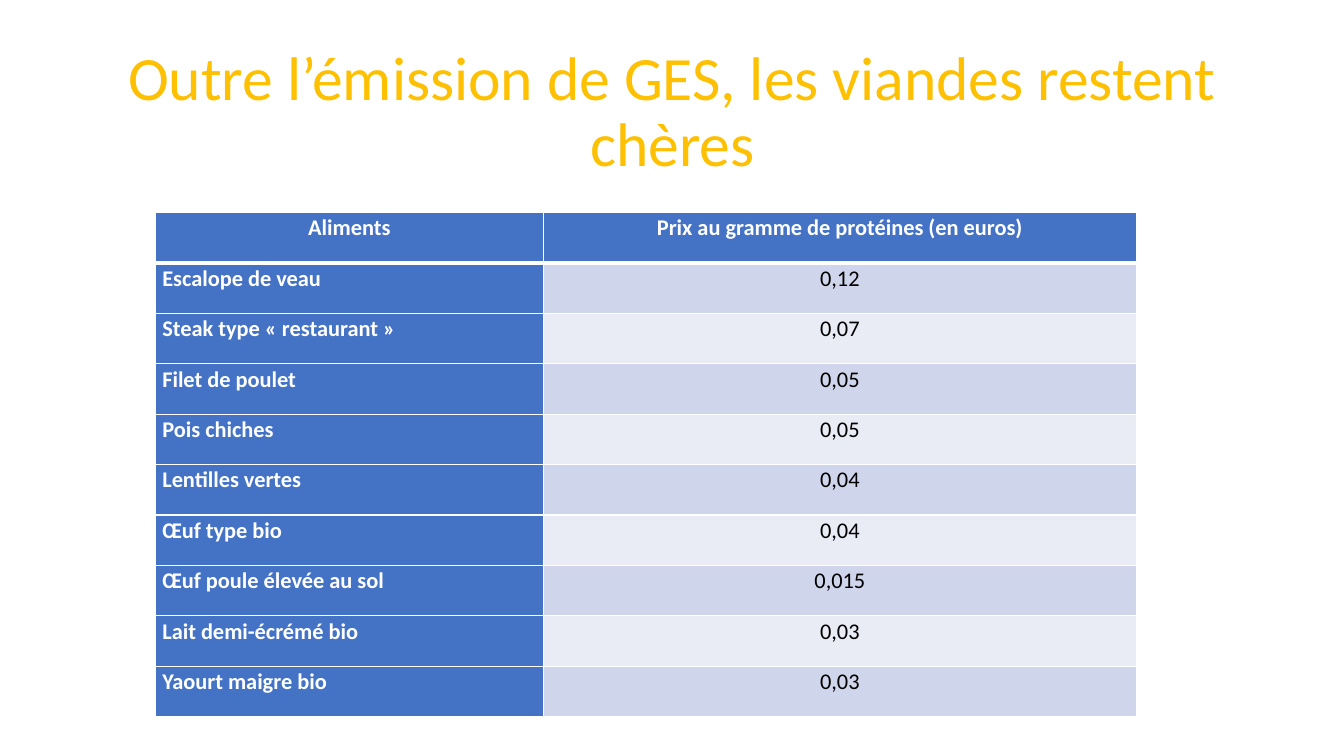
from dataclasses import dataclass

from lxml import etree
from pptx import Presentation, util as u
from pptx.dml.color import RGBColor
from pptx.enum import text as t
from pptx.oxml.ns import qn

GOLD = RGBColor(0xFF, 0xC0, 0x00)
BLUE = RGBColor(0x44, 0x72, 0xC4)
DARK = RGBColor(0xCF, 0xD5, 0xEA)
PALE = RGBColor(0xE9, 0xEB, 0xF5)
WHITE = RGBColor(0xFF, 0xFF, 0xFF)
BLACK = RGBColor(0x00, 0x00, 0x00)

LEFT = t.PP_ALIGN.LEFT
MID = t.PP_ALIGN.CENTER

COLS = (3.85, 5.88)
ROW = 0.5


@dataclass(frozen=True)
class Food:
    name: str
    price: str


HEAD = Food("Aliments", "Prix au gramme de protéines (en euros)")
FOODS = (
    Food("Escalope de veau", "0,12"),
    Food("Steak type « restaurant »", "0,07"),
    Food("Filet de poulet", "0,05"),
    Food("Pois chiches", "0,05"),
    Food("Lentilles vertes", "0,04"),
    Food("Œuf type bio", "0,04"),
    Food("Œuf poule élevée au sol", "0,015"),
    Food("Lait demi-écrémé bio", "0,03"),
    Food("Yaourt maigre bio", "0,03"),
)


def write(frame, words: str, *, size: float, color: RGBColor, bold: bool = False,
          align=MID, space: float = 1.0) -> None:
    frame.word_wrap = True
    para = frame.paragraphs[0]
    para.alignment = align
    para.line_spacing = space
    run = para.add_run()
    run.text = words
    font = run.font
    font.name = "Calibri"
    font.size = u.Pt(size)
    font.bold = bold
    font.color.rgb = color


def edge(cell, **widths: float) -> None:
    """Draw white cell borders; each side has its width in points."""
    props = cell._tc.get_or_add_tcPr()
    for spot, (side, width) in enumerate(widths.items()):
        line = etree.Element(qn(f"a:ln{side}"), w=str(u.Pt(width)))
        fill = etree.SubElement(line, qn("a:solidFill"))
        etree.SubElement(fill, qn("a:srgbClr"), val=str(WHITE))
        props.insert(spot, line)


def put(cell, words: str, *, fill: RGBColor, color: RGBColor, bold: bool,
        align, top: float, low: float) -> None:
    """Fill one table cell; top and low are border widths in points."""
    cell.margin_left = cell.margin_right = u.Inches(0.07)
    cell.margin_top = cell.margin_bottom = 0
    write(cell.text_frame, words, size=16, color=color, bold=bold,
          align=align, space=1.07)
    cell.fill.solid()
    cell.fill.fore_color.rgb = fill
    edge(cell, L=1, R=1, T=top, B=low)


def add_title(slide) -> None:
    box = slide.shapes.add_textbox(u.Inches(0.92), u.Inches(0.4),
                                   u.Inches(11.5), u.Inches(1.45))
    box.text_frame.vertical_anchor = t.MSO_ANCHOR.MIDDLE
    write(box.text_frame, "Outre l’émission de GES, les viandes restent chères",
          size=44, color=GOLD, space=0.9)


def add_foods(slide) -> None:
    rows = (HEAD, *FOODS)
    table = slide.shapes.add_table(
        len(rows), len(COLS), u.Inches(1.54), u.Inches(2.11),
        u.Inches(sum(COLS)), u.Inches(ROW * len(rows))).table
    for col, width in zip(table.columns, COLS):
        col.width = u.Inches(width)
    for i, food in enumerate(rows):
        table.rows[i].height = u.Inches(ROW)
        head = i == 0
        lines = {"top": 3 if i == 1 else 1, "low": 3 if head else 1}
        band = DARK if i % 2 else PALE
        put(table.cell(i, 0), food.name, fill=BLUE, color=WHITE, bold=True,
            align=MID if head else LEFT, **lines)
        put(table.cell(i, 1), food.price, fill=BLUE if head else band,
            color=WHITE if head else BLACK, bold=head, align=MID, **lines)


def main() -> None:
    deck = Presentation()
    deck.slide_width = u.Inches(13.33)
    deck.slide_height = u.Inches(7.5)
    slide = deck.slides.add_slide(deck.slide_layouts[6])
    add_title(slide)
    add_foods(slide)
    deck.save("out.pptx")


if __name__ == "__main__":
    main()
